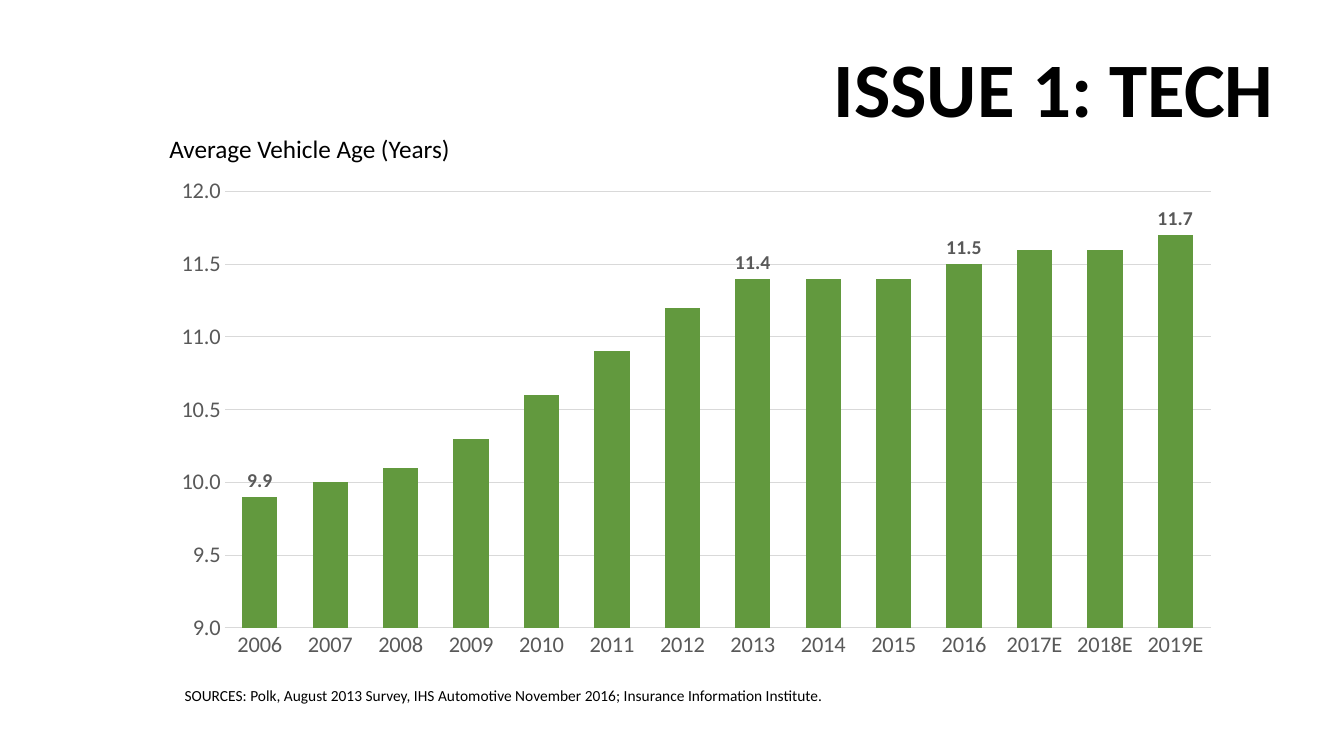
"""Build the slide on average vehicle age: heading, column chart and source line."""
from dataclasses import dataclass

from lxml.etree import SubElement
from pptx import Presentation
from pptx.chart.data import CategoryChartData
from pptx.dml.color import RGBColor
from pptx.enum.chart import XL_CHART_TYPE, XL_LABEL_POSITION, XL_TICK_MARK
from pptx.enum.text import MSO_ANCHOR, PP_ALIGN
from pptx.oxml.ns import qn
from pptx.util import Inches, Pt


@dataclass(frozen=True)
class Theme:
    """Colours and type sizes."""
    font: str = "Calibri"
    ink: RGBColor = RGBColor(0x00, 0x00, 0x00)
    label: RGBColor = RGBColor(0x59, 0x59, 0x59)
    rule: RGBColor = RGBColor(0xD9, 0xD9, 0xD9)
    column: RGBColor = RGBColor(0x62, 0x99, 0x3E)
    heading: int = 55
    subtitle: int = 18
    axis: int = 16
    value: int = 14
    source: int = 11


theme = Theme()
deck = Presentation()
deck.slide_width, deck.slide_height = Inches(13.33), Inches(7.5)
page = deck.slides.add_slide(deck.slide_layouts[6])


def share(left, top, width, height):
    """Turn percentages of the slide into lengths."""
    return (int(deck.slide_width * left / 100), int(deck.slide_height * top / 100),
            int(deck.slide_width * width / 100), int(deck.slide_height * height / 100))


def add_text(text, *, at, size, bold=False, align=PP_ALIGN.LEFT, anchor=MSO_ANCHOR.TOP,
             spacing=0.9, insets=(0, 0, 0, 0)):
    """Place one paragraph; insets run left, top, right, bottom in inches."""
    frame = page.shapes.add_textbox(*share(*at)).text_frame
    frame.word_wrap = True
    frame.vertical_anchor = anchor
    (frame.margin_left, frame.margin_top,
     frame.margin_right, frame.margin_bottom) = map(Inches, insets)
    para = frame.paragraphs[0]
    para.alignment, para.line_spacing = align, spacing
    span = para.add_run()
    span.text = text
    span.font.name, span.font.size, span.font.bold = theme.font, Pt(size), bold
    span.font.color.rgb = theme.ink


add_text("ISSUE 1: TECH", at=(5.93, 6.13, 89.57, 13.33), size=theme.heading, bold=True,
         align=PP_ALIGN.RIGHT, insets=(0.1, 0.05, 0.1, 0.05))
add_text("SOURCES: Polk, August 2013 Survey, IHS Automotive November 2016; "
         "Insurance Information Institute.",
         at=(10.73, 88.4, 66.24, 6.8), size=theme.source, anchor=MSO_ANCHOR.BOTTOM,
         spacing=0.85, insets=(0.4, 0, 0, 0.15))
add_text("Average Vehicle Age (Years)", at=(12.6, 18.13, 35.41, 3.6), size=theme.subtitle)

ages = {
    "2006": 9.9, "2007": 10, "2008": 10.1, "2009": 10.3, "2010": 10.6,
    "2011": 10.9, "2012": 11.2, "2013": 11.4, "2014": 11.4, "2015": 11.4,
    "2016": 11.5, "2017E": 11.6, "2018E": 11.6, "2019E": 11.7,
}
labelled_years = ("2006", "2013", "2016", "2019E")

age_data = CategoryChartData(number_format="0.0")
age_data.categories = list(ages)
age_data.add_series("Series 1", list(ages.values()))
chart = page.shapes.add_chart(XL_CHART_TYPE.COLUMN_CLUSTERED,
                              *share(11.93, 22, 79.74, 66.4), age_data).chart
chart.has_legend = chart.has_title = False
chart.font.name, chart.font.size = theme.font, Pt(theme.axis)
chart.font.color.rgb = theme.label

plot = chart.plots[0]
plot.gap_width, plot.vary_by_categories = 100, False
series = plot.series[0]
series.format.fill.solid()
series.format.fill.fore_color.rgb = theme.column

years = chart.category_axis
years.major_tick_mark = years.minor_tick_mark = XL_TICK_MARK.NONE
years.has_major_gridlines = False

scale = chart.value_axis
scale.major_tick_mark = scale.minor_tick_mark = XL_TICK_MARK.NONE
scale.minimum_scale, scale.maximum_scale, scale.major_unit = 9, 12, 0.5
scale.tick_labels.number_format = "#,##0.0"
scale.tick_labels.number_format_is_linked = False
scale.format.line.fill.background()

for line in (years.format.line, scale.major_gridlines.format.line):
    line.width = Pt(0.75)
    line.color.rgb = theme.rule

for year in labelled_years:
    label = series.points[list(ages).index(year)].data_label
    label.font.name, label.font.size, label.font.bold = theme.font, Pt(theme.value), True
    label.font.color.rgb = theme.label
    label.position = XL_LABEL_POSITION.OUTSIDE_END

plot_area = chart.element.find(".//" + qn("c:plotArea"))
layout = SubElement(plot_area, qn("c:layout"))
plot_area.insert(0, layout)
manual = SubElement(layout, qn("c:manualLayout"))
for tag, value in (("layoutTarget", "inner"), ("xMode", "edge"), ("yMode", "edge"),
                   ("x", "0.06"), ("y", "0.05"), ("w", "0.92"), ("h", "0.87")):
    SubElement(manual, qn("c:" + tag)).set("val", value)

deck.save("out.pptx")
